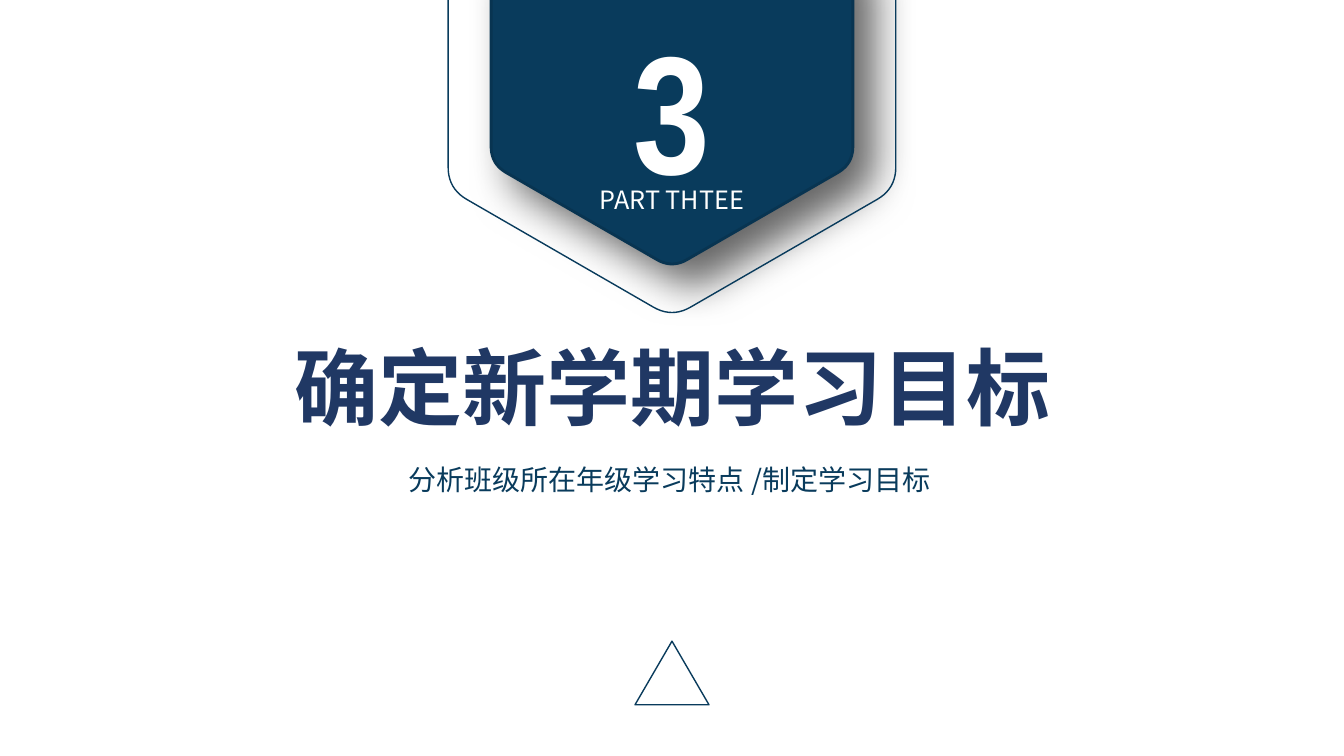
"""Section slide: a hexagonal badge with the part number, a title and a subtitle."""
from math import cos, radians, sin

from lxml import etree
from pptx import Presentation
from pptx.dml.color import RGBColor
from pptx.enum.shapes import MSO_SHAPE
from pptx.enum.text import MSO_AUTO_SIZE, PP_ALIGN
from pptx.oxml.ns import qn
from pptx.util import Pt

TRIANGLE = MSO_SHAPE.ISOSCELES_TRIANGLE
CENTER = PP_ALIGN.CENTER
GROW = MSO_AUTO_SIZE.SHAPE_TO_FIT_TEXT
COLORS = {"navy": "093B5C", "edge": "083451", "title": "203864",
          "white": "FFFFFF", "shadow": "000000"}
SANS = "Noto Sans CJK SC"
CX, CY = 480, 42.5
CUT = 0.083
STEPS = 10


def rgb(name):
    return RGBColor.from_string(COLORS[name])


def add_text(text, x, y, w, h, size, font, color, bold=False):
    tf = s.shapes.add_textbox(Pt(x), Pt(y), Pt(w), Pt(h)).text_frame
    tf.word_wrap = True
    tf.auto_size = GROW
    tf.text = text
    p = tf.paragraphs[0]
    p.alignment = CENTER
    r = p.runs[0]
    r.font.size = Pt(size)
    r.font.bold = bold
    r.font.color.rgb = rgb(color)
    r.font.name = font
    etree.SubElement(r.font._element, qn("a:ea"), typeface=font)


prs = Presentation()
prs.slide_width, prs.slide_height = Pt(960), Pt(540)
s = prs.slides.add_slide(prs.slide_layouts[6])

add_text("确定新学期学习目标", 166.3, 236.2, 627.8, 79.9, 60, SANS, "title", True)
add_text("分析班级所在年级学习特点 /制定学习目标 ", 211, 326.9, 538.6, 31.7, 20, SANS, "navy")

hexagons = []
for radius, line_color, line_width in [(149.2, "edge", 2), (184.6, "navy", 1)]:
    corners = [(CX + radius * cos(radians(a)), CY + radius * sin(radians(a)))
               for a in range(-90, 270, 60)]
    points = []
    for i, (x, y) in enumerate(corners):
        (px, py), (nx, ny) = corners[i - 1], corners[(i + 1) % 6]
        for k in range(STEPS + 1):
            t = k / STEPS
            before, after = CUT * (1 - t) ** 2, CUT * t ** 2
            points.append((Pt(x + before * (px - x) + after * (nx - x)),
                           Pt(y + before * (py - y) + after * (ny - y))))
    fb = s.shapes.build_freeform(*points[0])
    fb.add_line_segments(points[1:], close=True)
    sp = fb.convert_to_shape()
    sp.fill.background()
    sp.line.color.rgb = rgb(line_color)
    sp.line.width = Pt(line_width)
    sp.shadow.inherit = False
    hexagons.append(sp)

badge = hexagons[0]
badge.fill.solid()
badge.fill.fore_color.rgb = rgb("navy")
effects = badge._element.spPr.find(qn("a:effectLst"))
shadow = etree.SubElement(effects, qn("a:outerShdw"), blurRad=str(Pt(30)),
                          dist=str(Pt(20)), dir="2700000", algn="tl", rotWithShape="0")
shade = etree.SubElement(shadow, qn("a:srgbClr"), val=COLORS["shadow"])
etree.SubElement(shade, qn("a:alpha"), val="60000")

add_text("3", 427, 1.4, 105.8, 152.6, 120, "Arial Narrow", "white", True)
add_text("PART THTEE", 407.5, 128.2, 144.7, 28.8, 18, SANS, "white")

sp = s.shapes.add_shape(TRIANGLE, Pt(453.6), Pt(458), Pt(52.8), Pt(45.4))
sp.fill.background()
sp.line.color.rgb = rgb("navy")
sp.line.width = Pt(1)
sp.shadow.inherit = False

prs.save("out.pptx")
